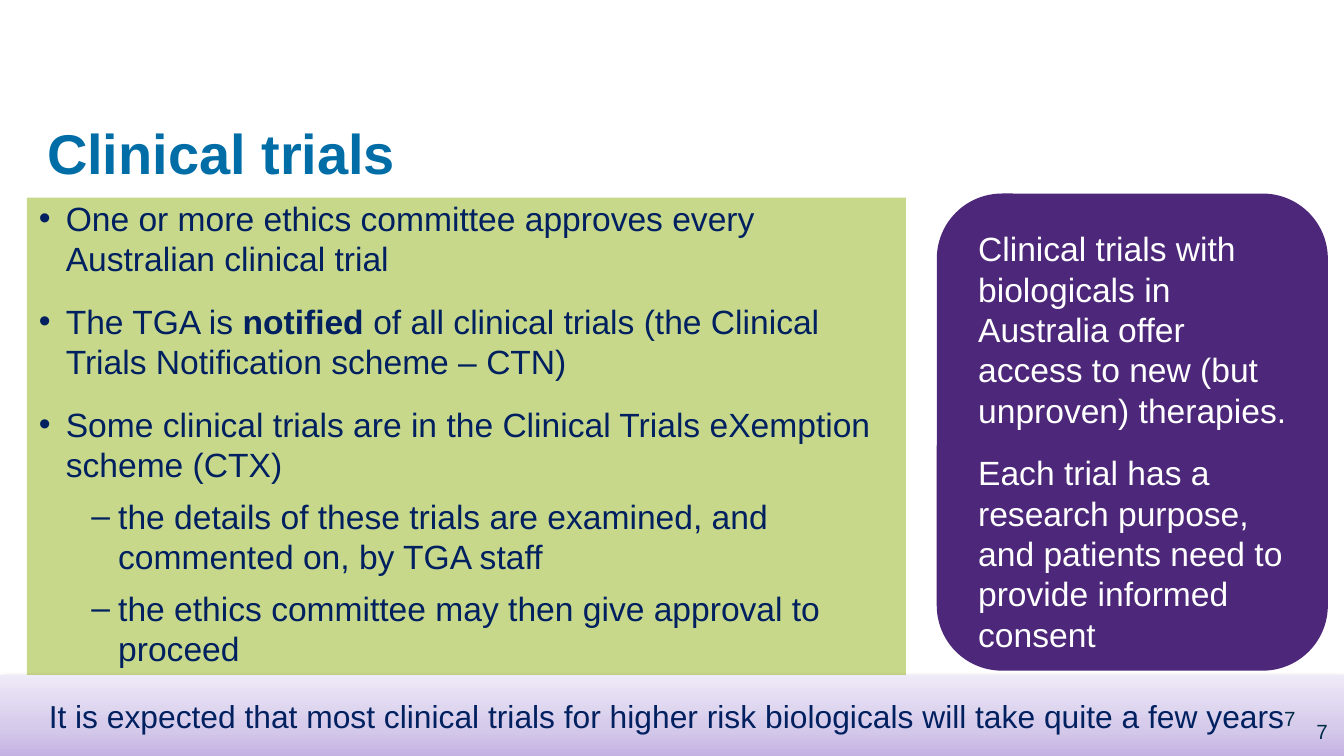
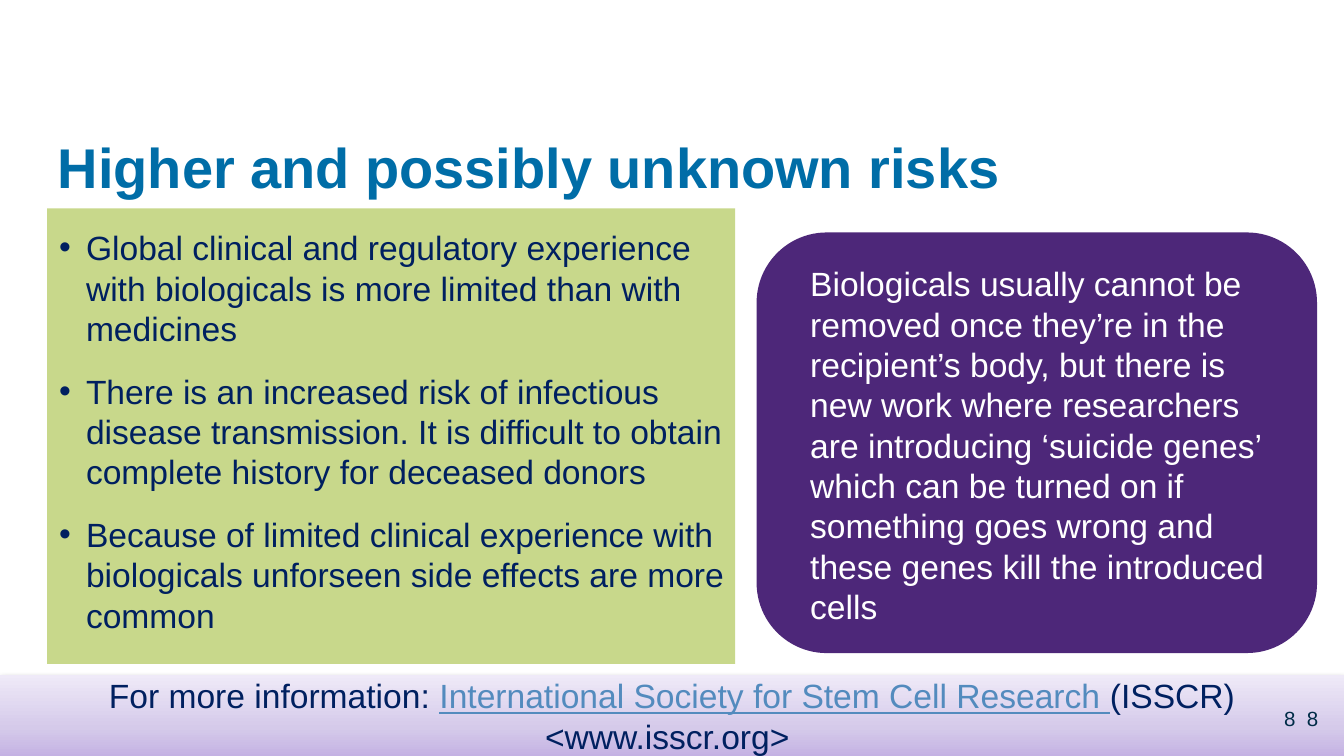
from dataclasses import dataclass

from lxml import etree
from pptx import Presentation
from pptx.dml.color import RGBColor
from pptx.enum import shapes, text
from pptx.oxml import ns
from pptx.util import Inches, Pt


@dataclass(frozen=True)
class Theme:
    font: str = "Arial"
    title: str = "006DA7"
    navy: str = "002060"
    link: str = "538BBE"
    page: str = "002C47"
    white: str = "FFFFFF"
    green: str = "C8D88B"
    purple: str = "4D2779"
    fade: tuple = ((0, "C4B2E3"), (35, "D5CAEA"), (100, "EFEAF8"))
    head: int = 30
    main: int = 18
    small: int = 11


T = Theme()

# Content: a run is (text, style), a point is (level, runs); boxes are left, top, width, height
SLIDES = [
    dict(
        title="Clinical trials", title_box=(0.35, 0.84, 9.06, 0.59),
        list_box=(0.2, 1.47, 6.54, 3.62), pad=0, before=6, after=6,
        points=[
            (0, [("One or more ethics committee approves every Australian clinical trial", "")]),
            (0, [("The TGA is ", ""), ("notified ", "bold"),
                 ("of all clinical trials (the Clinical Trials Notification scheme – CTN)", "")]),
            (0, [("Some clinical trials are in the Clinical Trials eXemption scheme (CTX)", "")]),
            (1, [("the details of these trials are examined, and commented on, by TGA staff", "")]),
            (1, [("the ethics committee may then give approval to proceed", "")]),
        ],
        card=(6.97, 1.44, 2.91, 3.55), note_box=(7.18, 1.65, 2.57, 3.76),
        notes=["Clinical trials with biologicals in Australia offer access to new "
               "(but unproven) therapies.",
               "Each trial has a research purpose, and patients need to provide "
               "informed consent"],
        foot=[[("It is expected that most clinical trials for higher risk biologicals "
                "will take quite a few years ", "")]],
        foot_size=17, page="7", spots=[(7.2, 5.25), (7.44, 5.35)],
    ),
    dict(
        title="Higher and possibly unknown risks", title_box=(0.43, 0.84, 8.03, 0.79),
        list_box=(0.35, 1.55, 5.12, 3.39), pad=0.14, before=12, after=0,
        points=[
            (0, [("Global clinical and regulatory experience with biologicals is more "
                  "limited than with medicines", "")]),
            (0, [("There is an increased risk of infectious disease transmission. It is "
                  "difficult to obtain complete history for deceased donors", "")]),
            (0, [("Because of limited clinical experience with biologicals unforseen "
                  "side effects are more common", "")]),
        ],
        card=(5.63, 1.73, 4.17, 3.13), note_box=(5.93, 1.91, 3.68, 3.13),
        notes=["Biologicals usually cannot be removed once they’re in the recipient’s "
               "body, but there is new work where researchers are introducing ‘suicide "
               "genes’ which can be turned on if something goes wrong and these genes "
               "kill the introduced cells"],
        foot=[[("For more information: ", ""),
               ("International Society for Stem Cell Research ", "link"),
               ("(ISSCR)", "")], [("<www.isscr.org> ", "")]],
        foot_size=18, page="8", spots=[(7.2, 5.25), (7.37, 5.25)],
    ),
]
WIDTH = Inches(10)
HEIGHT = WIDTH * 9 // 16
BAND = (0, 5.02, 10, 0.61)
PAGE = (2.44, 0.3)
LEVELS = [("•", 0.29), ("–", 0.68)]
HANG = 0.2


# Helpers
def place(box):
    return [Inches(v) for v in box]


def sub(node, tag, **attrs):
    return etree.SubElement(node, ns.qn(tag), attrs)


def add_run(para, words, size, color, bold=False, line=False):
    run = para.add_run()
    run.text = words
    font = run.font
    font.name, font.size, font.bold = T.font, Pt(size), bold
    font.color.rgb = RGBColor.from_string(color)
    if line:
        font.underline = True


def set_frame(shape, anchor=text.MSO_ANCHOR.TOP, inset=True):
    frame = shape.text_frame
    frame.word_wrap = True
    frame.auto_size = text.MSO_AUTO_SIZE.NONE
    frame.vertical_anchor = anchor
    if inset:
        frame.margin_left = frame.margin_right = 0
        frame.margin_top = frame.margin_bottom = 0
    return frame


def next_para(frame, index, align=text.PP_ALIGN.LEFT):
    para = frame.add_paragraph() if index else frame.paragraphs[0]
    para.alignment = align
    return para


def add_panel(slide, kind, box, color=None):
    panel = slide.shapes.add_shape(kind, *place(box))
    panel.shadow.inherit = False
    panel.line.fill.background()
    if color:
        panel.fill.solid()
        panel.fill.fore_color.rgb = RGBColor.from_string(color)
    return panel


def set_bullet(para, level):
    mark, left = LEVELS[level]
    props = para._p.get_or_add_pPr()
    props.set("marL", str(Inches(left)))
    props.set("indent", str(-Inches(HANG)))
    sub(sub(props, "a:buClr"), "a:srgbClr", val=T.navy)
    sub(props, "a:buFont", typeface=T.font)
    sub(props, "a:buChar", char=mark)


# Slide parts
def add_title(slide, data):
    title = slide.shapes.title
    title.left, title.top, title.width, title.height = place(data["title_box"])
    frame = set_frame(title, text.MSO_ANCHOR.MIDDLE)
    add_run(next_para(frame, 0), data["title"], T.head, T.title, bold=True)


def add_points(slide, data):
    panel = add_panel(slide, shapes.MSO_SHAPE.RECTANGLE, data["list_box"], T.green)
    frame = set_frame(panel)
    frame.margin_top = Inches(data["pad"])
    for i, (level, runs) in enumerate(data["points"]):
        para = next_para(frame, i)
        para.level = level
        para.space_before = Pt(data["before"] if i and not level else 0)
        para.space_after = Pt(data["after"])
        set_bullet(para, level)
        for words, style in runs:
            add_run(para, words, T.main, T.navy, bold=style == "bold")


def add_card(slide, data):
    add_panel(slide, shapes.MSO_SHAPE.ROUNDED_RECTANGLE, data["card"], T.purple)
    frame = set_frame(slide.shapes.add_textbox(*place(data["note_box"])), inset=False)
    for i, words in enumerate(data["notes"]):
        para = next_para(frame, i)
        para.space_after = Pt(12)
        add_run(para, words, T.main, T.white)


def add_band(slide, data):
    band = add_panel(slide, shapes.MSO_SHAPE.RECTANGLE, BAND)
    band.fill.gradient()
    band.fill.gradient_angle = 90
    props = band._element.spPr
    stops = props.find(".//" + ns.qn("a:gsLst"))
    for stop in list(stops):
        stops.remove(stop)
    for pos, color in T.fade:
        sub(sub(stops, "a:gs", pos=str(pos * 1000)), "a:srgbClr", val=color)
    shade = sub(props.find(ns.qn("a:effectLst")), "a:outerShdw", blurRad=str(Pt(3.1)),
                dist=str(Pt(1.6)), dir="5400000", rotWithShape="0")
    sub(sub(shade, "a:srgbClr", val="000000"), "a:alpha", val="38000")

    frame = set_frame(band, text.MSO_ANCHOR.MIDDLE, inset=False)
    para = next_para(frame, 0, text.PP_ALIGN.CENTER)
    for i, runs in enumerate(data["foot"]):
        if i:
            para.add_line_break()
        for words, style in runs:
            link = style == "link"
            add_run(para, words, data["foot_size"], T.link if link else T.navy, line=link)


def add_pages(slide, data):
    for spot in data["spots"]:
        frame = set_frame(slide.shapes.add_textbox(*place(spot + PAGE)))
        para = next_para(frame, 0, text.PP_ALIGN.RIGHT)
        add_run(para, data["page"], T.small, T.page)


def main():
    deck = Presentation()
    deck.slide_width, deck.slide_height = WIDTH, HEIGHT
    for data in SLIDES:
        slide = deck.slides.add_slide(deck.slide_layouts[5])
        for part in (add_title, add_points, add_card, add_band, add_pages):
            part(slide, data)
    deck.save("out.pptx")


if __name__ == "__main__":
    main()
